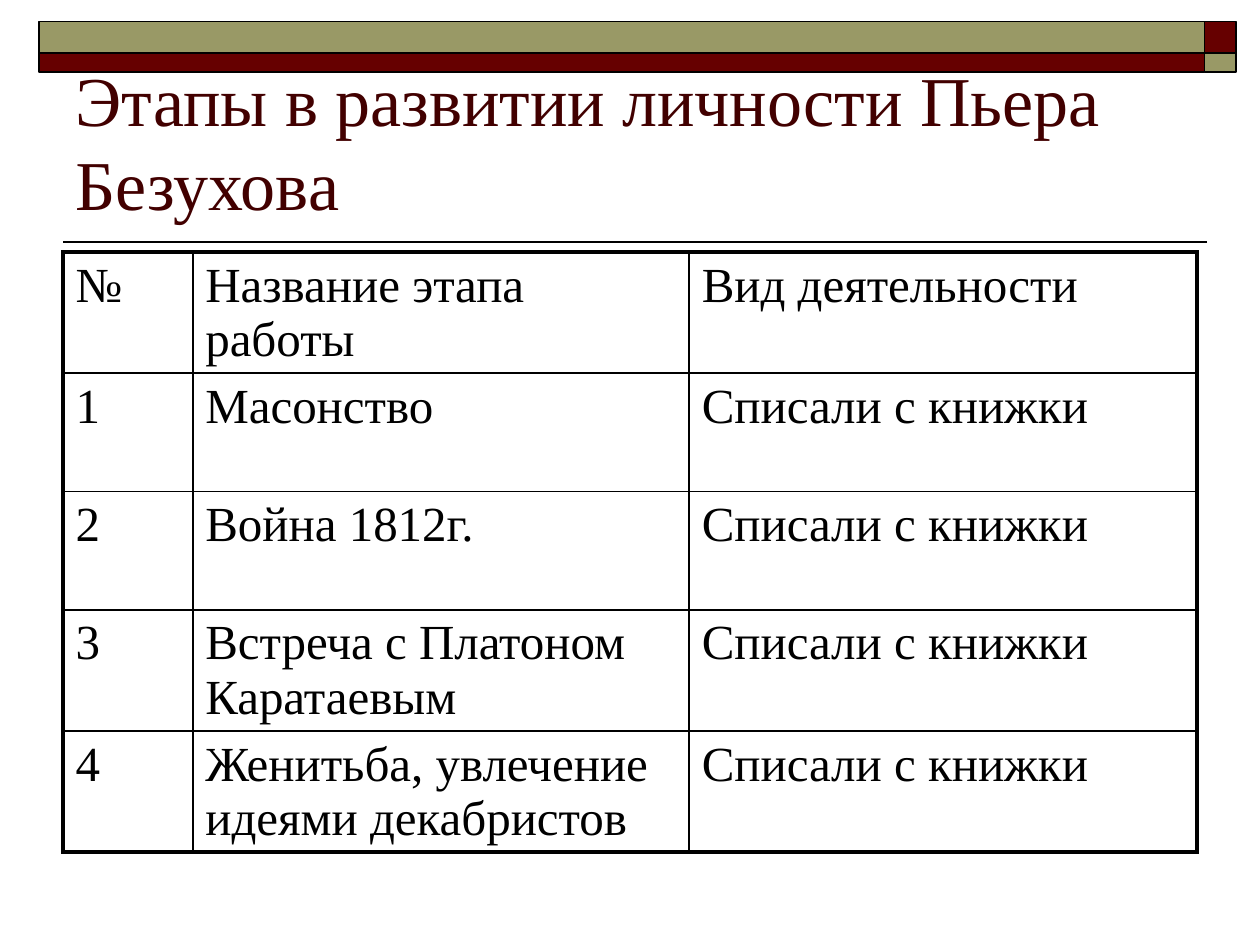
from lxml import etree
from pptx import Presentation, util as u
from pptx.dml.color import RGBColor
from pptx.enum import shapes, text
from pptx.oxml.ns import qn

FONT = "Times New Roman"
BLACK, OLIVE, MAROON = "000000", "999966", "660000"
LEFT, WIDTH = 0.5, 9
THIN, THICK = 1, 2.25


def color(hex_value):
    return RGBColor.from_string(hex_value)


def set_border(cell, side, points):
    """Draw one cell side (L, R, T or B); call before the cell's fill is set."""
    line = etree.SubElement(cell._tc.get_or_add_tcPr(), qn(f"a:ln{side}"), w=str(u.Pt(points)))
    fill = etree.SubElement(line, qn("a:solidFill"))
    etree.SubElement(fill, qn("a:srgbClr"), val=BLACK)


deck = Presentation()
deck.slide_width, deck.slide_height = u.Inches(10), u.Inches(7.5)
page = deck.slides.add_slide(deck.slide_layouts[5])

# Rule under the title
rule = page.shapes.add_connector(
    shapes.MSO_CONNECTOR.STRAIGHT,
    u.Inches(LEFT + WIDTH + 0.08), u.Inches(1.92), u.Inches(LEFT), u.Inches(1.92))
rule.line.color.rgb = color(BLACK)
rule.line.width = u.Pt(THIN)
etree.SubElement(rule._element.spPr, qn("a:effectLst"))

# Checkered band: two rows by two columns, colours alternating
band_columns = [(0.31, 9.25), (9.56, 0.25)]
band_rows = [(0.17, 0.25), (0.42, 0.15)]
for row, (top, height) in enumerate(band_rows):
    for column, (left, width) in enumerate(band_columns):
        box = page.shapes.add_shape(
            shapes.MSO_SHAPE.RECTANGLE,
            u.Inches(left), u.Inches(top), u.Inches(width), u.Inches(height))
        box.shadow.inherit = False
        box.fill.solid()
        box.fill.fore_color.rgb = color((OLIVE, MAROON)[(row + column) % 2])
        box.line.color.rgb = color(BLACK)
        box.line.width = u.Pt(THIN)

# Title
title = page.shapes.title
title.left, title.top = u.Inches(LEFT), u.Inches(0.58)
title.width, title.height = u.Inches(WIDTH), u.Inches(1.25)
frame = title.text_frame
frame.text = "Этапы в развитии личности Пьера Безухова"
frame.word_wrap = True
frame.auto_size = text.MSO_AUTO_SIZE.NONE
frame.vertical_anchor = text.MSO_ANCHOR.BOTTOM
para = frame.paragraphs[0]
para.alignment = text.PP_ALIGN.LEFT
para.font.name, para.font.size = FONT, u.Pt(40)
para.font.color.rgb = color("420000")

# Table of stages
ACTIVITY = "Списали с книжки"
stages = ["Масонство", "Война 1812г.", "Встреча с Платоном Каратаевым",
          "Женитьба, увлечение идеями декабристов"]
rows = [("№", "Название этапа работы", "Вид деятельности")]
rows += [(str(number), stage, ACTIVITY) for number, stage in enumerate(stages, 1)]
column_widths = [1.03, 3.94, 4.03]
row_height = 0.94
last_row, last_column = len(rows) - 1, len(column_widths) - 1

table = page.shapes.add_table(
    len(rows), len(column_widths), u.Inches(LEFT), u.Inches(2),
    u.Inches(WIDTH), u.Inches(row_height * len(rows))).table
table.first_row = table.horz_banding = False
for column, width in zip(table.columns, column_widths):
    column.width = u.Inches(width)

for r, values in enumerate(rows):
    for c, value in enumerate(values):
        cell = table.cell(r, c)
        outer_sides = {"L": c == 0, "R": c == last_column, "T": r == 0, "B": r == last_row}
        for side, is_outer in outer_sides.items():
            set_border(cell, side, THICK if is_outer else THIN)
        cell.fill.background()
        cell.text = value
        para = cell.text_frame.paragraphs[0]
        para.font.name, para.font.size = FONT, u.Pt(28)
        para.font.color.rgb = color(BLACK)

deck.save("out.pptx")
